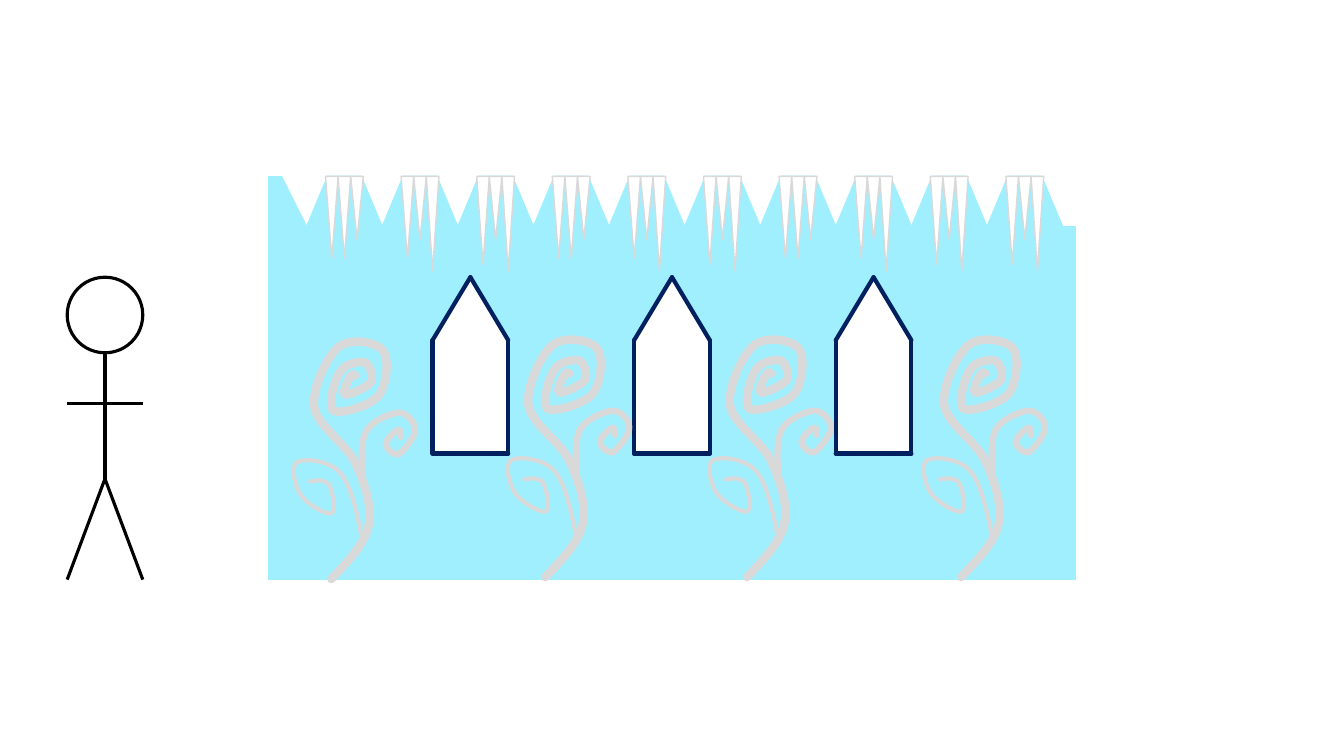
from pptx import Presentation
from pptx.dml.color import RGBColor as RGB
from pptx.enum.shapes import MSO_CONNECTOR as Link, MSO_SHAPE as Form
from pptx.oxml.ns import qn
from pptx.util import Inches, Pt
from lxml.etree import SubElement as Sub

ICE = RGB(0x9F, 0xEF, 0xFF)
WHITE = RGB(0xFF, 0xFF, 0xFF)
BLACK = RGB(0, 0, 0)
NAVY = RGB(0x00, 0x20, 0x60)
GREY = RGB(0xD9, 0xD9, 0xD9)

COLS, ROWS = 320 / 3, 60
EDGE = 1 / 3
UNIT = 12.5

STEM = [
    (37, 235), (53, 218), (70, 201), (74, 182), (78, 163), (70, 140), (61, 120),
    (52, 101), (23, 83), (20, 64), (18, 45), (33, 14), (44, 5),
    (56, -5), (82, 0), (88, 8), (95, 16), (92, 43), (84, 53),
    (76, 63), (46, 72), (39, 68), (33, 64), (40, 37), (46, 29),
    (51, 21), (65, 19), (70, 20), (76, 22), (79, 35), (76, 40),
    (72, 45), (54, 53), (51, 52), (47, 51), (54, 37), (56, 34),
    (58, 31), (59, 32), (61, 33),
]
CURL = [
    (68, 134), (67, 117), (66, 100), (71, 89), (77, 78), (95, 71), (103, 70),
    (111, 69), (120, 79), (120, 86), (121, 93), (109, 108), (104, 111),
    (99, 113), (91, 105), (91, 101), (91, 97), (100, 88), (103, 87),
    (106, 86), (106, 90), (106, 94),
]
LEAF = [
    (68, 198), (63, 171), (57, 143), (46, 130), (35, 117), (10, 115), (3, 119),
    (-4, 123), (1, 144), (7, 152), (13, 161), (33, 172), (37, 170),
    (42, 168), (38, 147), (35, 142), (31, 136), (24, 137), (16, 138),
]
PLANT = [(STEM, 6), (CURL, 4.5), (LEAF, 3)]
FRAME = [(0, 14), (0, 5), (3, 0), (6, 5), (6, 14), (0, 14)]
DRIPS = [(6.5, 6.5, 5), (6.5, 5, 7.5), (7, 5, 7.5)]


class Board:
    def __init__(self, deck):
        self.wide, self.high = deck.slide_width, deck.slide_height
        self.slide = deck.slides.add_slide(deck.slide_layouts[6])
        self.layer = self.slide.shapes

    def spot(self, col, row):
        return round((col + EDGE) / COLS * self.wide), round(row / ROWS * self.high)

    def group(self):
        self.layer = self.slide.shapes.add_group_shape().shapes

    def loose(self):
        self.layer = self.slide.shapes

    def ink(self, item, tint, size, cap="flat"):
        item.line.color.rgb = tint
        item.line.width = Pt(size)
        item.line._get_or_add_ln().set("cap", cap)

    def shape(self, form, col, row, wide, high, fill, tint, size=1):
        left, top = self.spot(col, row)
        right, base = self.spot(col + wide, row + high)
        item = self.layer.add_shape(form, left, top, right - left, base - top)
        item.shadow.inherit = False
        item.fill.solid()
        item.fill.fore_color.rgb = fill
        self.ink(item, tint, size)
        return item

    def line(self, start, end, tint, size, cap="flat"):
        item = self.layer.add_connector(
            Link.STRAIGHT, *self.spot(*start), *self.spot(*end))
        self.ink(item, tint, size, cap)
        Sub(item._element.spPr, qn("a:effectLst"))

    def curve(self, col, row, dots, tint, size):
        spots = [self.spot(col + x / UNIT, row + y / UNIT) for x, y in dots]
        pen = self.layer.build_freeform(*spots[0])
        pen.add_line_segments(spots[1:], close=False)
        item = pen.convert_to_shape()
        item.shadow.inherit = False
        item.fill.background()
        self.ink(item, tint, size, "rnd")
        trace = item._element.find(".//" + qn("a:path"))
        steps = trace.findall(qn("a:lnTo"))
        for i in range(0, len(steps), 3):
            bend = Sub(trace, qn("a:cubicBezTo"))
            for step in steps[i:i + 3]:
                bend.append(step[0])
                trace.remove(step)

    def window(self, col, row):
        self.group()
        self.shape(Form.RECTANGLE, col, row + 5, 6, 9, WHITE, WHITE)
        self.shape(Form.ISOSCELES_TRIANGLE, col, row, 6, 5, WHITE, WHITE)
        spots = [(col + x, row + y) for x, y in FRAME]
        for start, end in zip(spots, spots[1:]):
            self.line(start, end, NAVY, 3, "rnd")
        self.loose()

    def flower(self, col, row):
        self.group()
        for dots, size in PLANT:
            self.curve(col, row, dots, GREY, size)
        self.loose()

    def person(self, col, row):
        self.shape(Form.OVAL, col, row, 6, 6, WHITE, BLACK, 2.25)
        mid, hip, foot = col + 3, row + 16, row + 24
        for start, end in [((mid, row + 6), (mid, hip)),
                           ((mid, hip), (col, foot)),
                           ((mid, hip), (col + 6, foot)),
                           ((col, row + 10), (col + 6, row + 10))]:
            self.line(start, end, BLACK, 2.25)


def main():
    deck = Presentation()
    deck.slide_width, deck.slide_height = Inches(40 / 3), Inches(7.5)
    board = Board(deck)

    board.shape(Form.RECTANGLE, 21, 18, 64, 28, ICE, ICE)
    board.shape(Form.RECTANGLE, 21, 14, 1, 4, ICE, ICE)
    board.shape(Form.RIGHT_TRIANGLE, 22, 14, 2, 4, ICE, ICE)
    for col in range(24, 84, 6):
        tooth = board.shape(Form.TRAPEZOID, col, 14, 6, 4, ICE, ICE)
        tooth.adjustments[0] = 0.417

    board.person(5, 22)
    for col in (34, 50, 66):
        board.window(col, 22)
    for col, row in [(23, 27.16), (40, 27), (56, 27), (73, 27)]:
        board.flower(col, row)

    for i, drips in enumerate(DRIPS * 3 + DRIPS[-1:]):
        for j, high in enumerate(drips):
            spike = board.shape(Form.ISOSCELES_TRIANGLE, 25.5 + 6 * i + j, 14,
                                1, high, WHITE, GREY)
            spike.rotation = 180

    deck.save("out.pptx")


if __name__ == "__main__":
    main()
